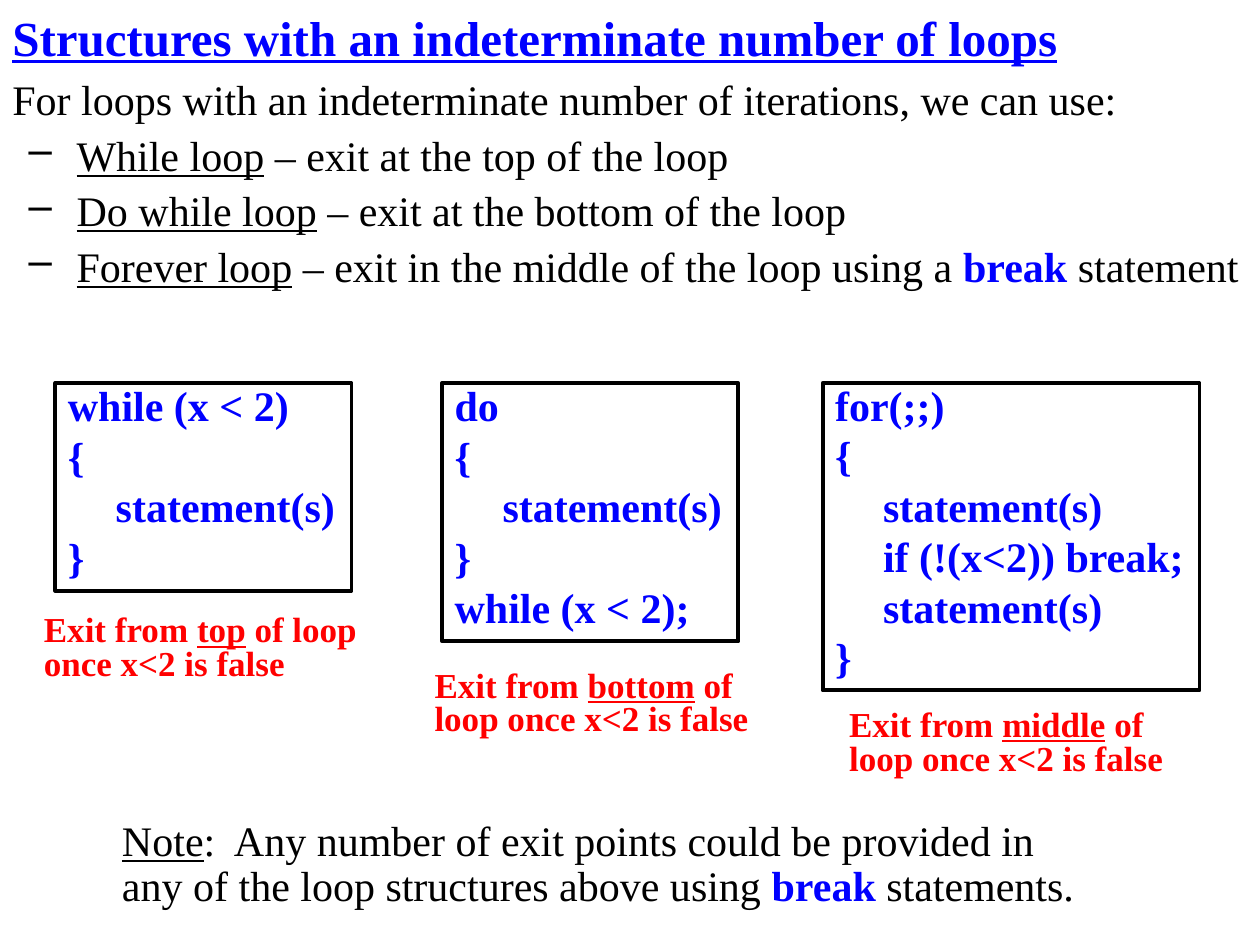
"""Build a slide comparing while, do while and forever loops."""
from dataclasses import dataclass

from lxml.etree import SubElement
from pptx import Presentation
from pptx.dml.color import RGBColor
from pptx.enum.shapes import MSO_SHAPE
from pptx.enum.text import MSO_ANCHOR, PP_ALIGN
from pptx.oxml.ns import qn
from pptx.util import Inches, Pt

FONT = "Times New Roman"
BLACK = RGBColor(0, 0, 0)
BLUE = RGBColor(0, 0, 255)
RED = RGBColor(255, 0, 0)
CODE_TOP = 3.04


@dataclass(frozen=True)
class Span:
    """A piece of text that is underlined or a keyword."""
    text: str
    underline: bool = False
    keyword: bool = False


@dataclass(frozen=True)
class Loop:
    """A code box and the caption below it."""
    left: float
    width: float
    height: float
    code: tuple[str, ...]
    exit_point: str
    caption_left: float
    caption_top: float
    caption_width: float


LOOPS = (
    Loop(0.44, 2.35, 1.65, ("while (x < 2)", "{", "\tstatement(s)", "}"),
         "top", 0.25, 4.84, 2.73),
    Loop(3.51, 2.35, 2.05, ("do", "{", "\tstatement(s)", "}", "while (x < 2);"),
         "bottom", 3.35, 5.28, 2.88),
    Loop(6.53, 2.99, 2.44,
         ("for(;;)", "{", "\tstatement(s)", "\tif (!(x<2)) break;", "\tstatement(s)", "}"),
         "middle", 6.64, 5.59, 2.88),
)
BREAK = Span("break", keyword=True)
KINDS = (
    (Span("While loop", underline=True), Span(" – exit at the top of the loop")),
    (Span("Do while loop", underline=True), Span(" – exit at the bottom of the loop")),
    (Span("Forever loop", underline=True),
     Span(" – exit in the middle of the loop using a "), BREAK, Span(" statement")),
)


def add_paragraph(tf, spans, *, size=24, color=BLACK, bold=False, spacing=0.9,
                  margin=0.0, hanging=0.0, bullet="") -> None:
    """Append a formatted paragraph, filling the first one if it is empty."""
    first = tf.paragraphs[0]
    p = tf.add_paragraph() if first.runs else first
    p.alignment = PP_ALIGN.LEFT
    p.line_spacing = spacing
    p.space_before = Pt(5.8)
    pPr = p._p.get_or_add_pPr()
    pPr.set("marL", str(Inches(margin)))
    pPr.set("indent", str(-Inches(hanging)))
    if bullet:
        SubElement(pPr, qn("a:buChar")).set("char", bullet)
    for span in spans:
        r = p.add_run()
        r.text = span.text
        r.font.name = FONT
        r.font.size = Pt(size)
        r.font.bold = bold or span.keyword
        r.font.underline = span.underline
        r.font.color.rgb = BLUE if span.keyword else color


def add_text_box(s, left: float, top: float, width: float, height: float):
    """Add a wrapping text box and return its text frame."""
    tf = s.shapes.add_textbox(Inches(left), Inches(top), Inches(width), Inches(height)).text_frame
    tf.word_wrap = True
    return tf


def add_loop(s, loop: Loop) -> None:
    """Draw a framed code sample with its caption."""
    sp = s.shapes.add_shape(MSO_SHAPE.RECTANGLE, Inches(loop.left), Inches(CODE_TOP),
                            Inches(loop.width), Inches(loop.height))
    sp.shadow.inherit = False
    sp.fill.background()
    sp.line.color.rgb = BLACK
    sp.line.width = Pt(2.25)
    tf = sp.text_frame
    tf.word_wrap = False
    tf.vertical_anchor = MSO_ANCHOR.TOP
    for line in loop.code:
        add_paragraph(tf, [Span(line)], color=BLUE, bold=True, spacing=0.8,
                      margin=0.38, hanging=0.38)
    caption = add_text_box(s, loop.caption_left, loop.caption_top, loop.caption_width, 0.64)
    add_paragraph(caption, [Span("Exit from "), Span(loop.exit_point, underline=True),
                            Span(" of loop once x<2 is false")],
                  size=20, color=RED, bold=True, spacing=0.8)


def main() -> None:
    """Create and save the presentation."""
    prs = Presentation()
    prs.slide_width, prs.slide_height = Inches(10), Inches(7.5)
    s = prs.slides.add_slide(prs.slide_layouts[6])

    title = add_text_box(s, 0, 0, 10, 0.58)
    title.vertical_anchor = MSO_ANCHOR.MIDDLE
    add_paragraph(title, [Span("Structures with an indeterminate number of loops", underline=True)],
                  size=28, color=BLUE, bold=True, spacing=1.0)

    intro = add_text_box(s, 0, 0.58, 10, 1.8)
    add_paragraph(intro, [Span("For loops with an indeterminate number of iterations, we can use:")])
    for spans in KINDS:
        add_paragraph(intro, spans, margin=0.51, hanging=0.38, bullet="–")

    for loop in LOOPS:
        add_loop(s, loop)

    note = add_text_box(s, 0.87, 6.46, 7.97, 0.82)
    add_paragraph(note, [
        Span("Note", underline=True),
        Span(":  Any number of exit points could be provided in any of the loop"
             " structures above using "),
        BREAK, Span(" statements.")])
    prs.save("out.pptx")


if __name__ == "__main__":
    main()
